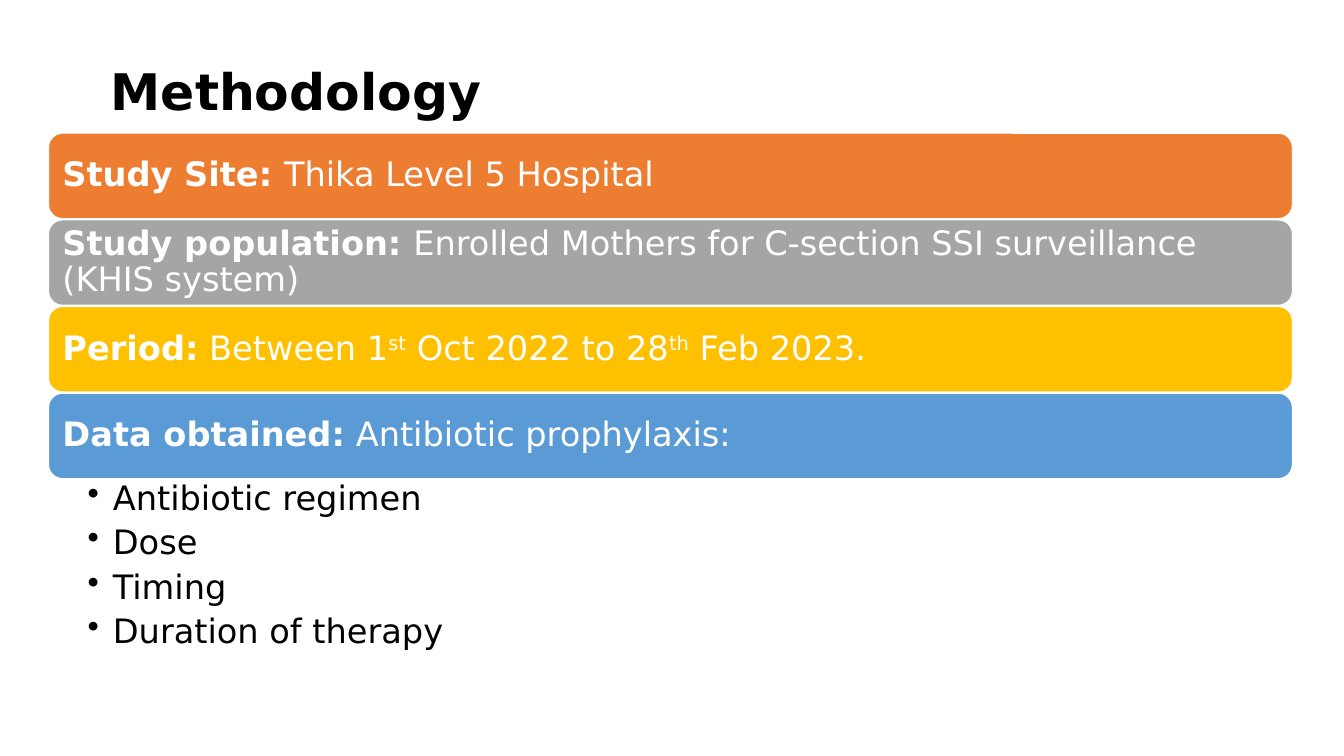
"""Build the Methodology slide: four coloured bars and a bullet list."""
from dataclasses import dataclass

import pptx
import pptx.dml.color
import pptx.enum.shapes
import pptx.enum.text
import pptx.oxml.ns
import pptx.util
from lxml import etree

PX = 9144
FONT = "DejaVu Sans"
COLORS = {
    "orange": "ED7D31",
    "gray": "A5A5A5",
    "gold": "FFC000",
    "blue": "5B9BD5",
    "white": "FFFFFF",
    "black": "000000",
}
LEFT, WIDTH = 48, 1234
BAR_TOP, BAR_HEIGHT, BAR_PITCH = 132, 85, 86
BULLETS = ["Antibiotic regimen", "Dose", "Timing", "Duration of therapy"]


@dataclass
class Run:
    text: str
    bold: bool = False
    raised: bool = False


@dataclass
class Bar:
    color: str
    runs: list[Run]


BARS = [
    Bar("orange", [Run("Study Site: ", bold=True), Run("Thika Level 5 Hospital")]),
    Bar("gray", [
        Run("Study population: ", bold=True),
        Run("Enrolled Mothers for C-section SSI surveillance (KHIS system)"),
    ]),
    Bar("gold", [
        Run("Period:", bold=True),
        Run(" Between 1"),
        Run("st", raised=True),
        Run(" Oct 2022 to 28"),
        Run("th", raised=True),
        Run(" Feb 2023."),
    ]),
    Bar("blue", [Run("Data obtained:", bold=True), Run(" Antibiotic prophylaxis:")]),
]


def px(n: int) -> pptx.util.Emu:
    return pptx.util.Emu(n * PX)


def rgb(name: str) -> pptx.dml.color.RGBColor:
    return pptx.dml.color.RGBColor.from_string(COLORS[name])


def apply(target: object, values: dict) -> None:
    for name, value in values.items():
        setattr(target, name, value)


def set_frame(tf, insets: tuple[int, int, int, int], anchor: str) -> None:
    left, top, right, bottom = insets
    apply(tf, {
        "word_wrap": True,
        "vertical_anchor": pptx.enum.text.MSO_ANCHOR[anchor],
        "margin_left": px(left),
        "margin_top": px(top),
        "margin_right": px(right),
        "margin_bottom": px(bottom),
    })


def write(p, runs: list[Run], size: int, color: str) -> None:
    apply(p, {"line_spacing": 0.9, "alignment": pptx.enum.text.PP_ALIGN.LEFT})
    for run in runs:
        r = p.add_run()
        r.text = run.text
        apply(r.font, {"name": FONT, "size": pptx.util.Pt(size), "bold": run.bold})
        r.font.color.rgb = rgb(color)
        if run.raised:
            r._r.get_or_add_rPr().set("baseline", "30000")


def add_title(s, text: str) -> None:
    sp = s.shapes.add_textbox(px(100), px(55), px(598), px(77))
    set_frame(sp.text_frame, (10, 5, 10, 5), "MIDDLE")
    write(sp.text_frame.paragraphs[0], [Run(text, bold=True)], 36, "black")


def add_bar(s, bar: Bar, top: int) -> None:
    sp = s.shapes.add_shape(
        pptx.enum.shapes.MSO_SHAPE.ROUNDED_RECTANGLE,
        px(LEFT), px(top), px(WIDTH), px(BAR_HEIGHT),
    )
    sp.shadow.inherit = False
    sp.fill.solid()
    sp.fill.fore_color.rgb = rgb(bar.color)
    sp.line.color.rgb = rgb("white")
    sp.line.width = pptx.util.Pt(1)
    set_frame(sp.text_frame, (10, 10, 10, 10), "MIDDLE")
    write(sp.text_frame.paragraphs[0], bar.runs, 24, "white")


def add_bullets(s, items: list[str], top: int) -> None:
    sp = s.shapes.add_textbox(px(LEFT), px(top), px(WIDTH), px(220))
    tf = sp.text_frame
    set_frame(tf, (39, 3, 19, 3), "TOP")
    for i, item in enumerate(items):
        p = tf.add_paragraph() if i else tf.paragraphs[0]
        pPr = p._p.get_or_add_pPr()
        pPr.set("marL", str(px(25)))
        pPr.set("indent", str(px(-25)))
        etree.SubElement(pPr, pptx.oxml.ns.qn("a:buChar"), char="•")
        p.space_after = pptx.util.Pt(5.6)
        write(p, [Run(item)], 24, "black")


def main() -> None:
    prs = pptx.Presentation()
    apply(prs, {"slide_width": px(1333), "slide_height": px(750)})
    s = prs.slides.add_slide(prs.slide_layouts[6])
    add_title(s, "Methodology")
    for i, bar in enumerate(BARS):
        add_bar(s, bar, BAR_TOP + i * BAR_PITCH)
    add_bullets(s, BULLETS, BAR_TOP + len(BARS) * BAR_PITCH - 1)
    prs.save("out.pptx")


if __name__ == "__main__":
    main()
